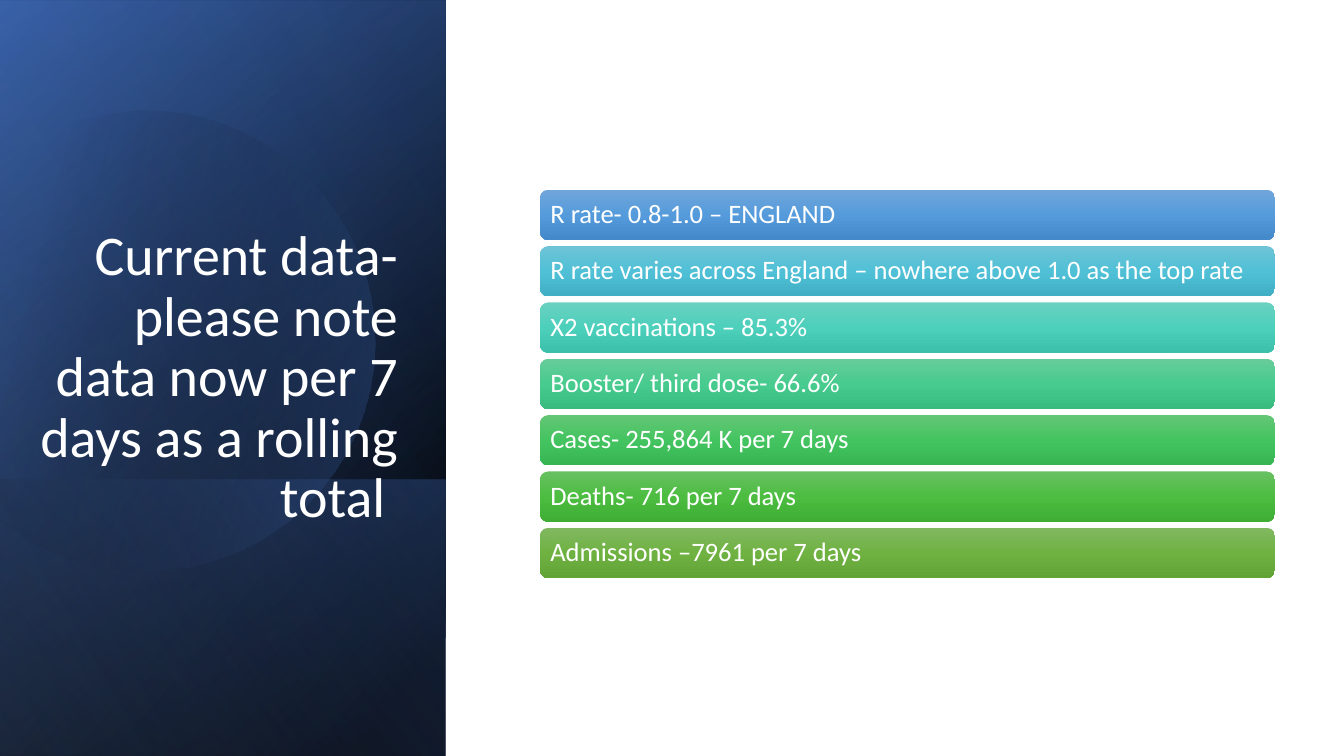
from dataclasses import dataclass
from math import cos, radians, sin

from pptx import Presentation
from pptx.dml.color import RGBColor
from pptx.enum.shapes import MSO_SHAPE
from pptx.enum.text import MSO_ANCHOR, MSO_AUTO_SIZE, PP_ALIGN
from pptx.oxml import parse_xml
from pptx.oxml.ns import nsdecls, qn
from pptx.util import Cm, Pt

FONT = "Calibri"
WHITE = RGBColor(0xFF, 0xFF, 0xFF)
BLACK = RGBColor(0x00, 0x00, 0x00)
NAVY = RGBColor(0x2F, 0x55, 0x97)
BLUE = RGBColor(0x44, 0x72, 0xC4)
PALE_BLUE = RGBColor(0x8F, 0xAA, 0xDC)

TITLE = "Current data- please note data now per 7 days as a rolling total "


@dataclass(frozen=True)
class Stop:
    pos: int
    color: RGBColor
    opacity: int = 100


@dataclass(frozen=True)
class Panel:
    left: float
    top: float
    width: float
    angle: int
    stops: tuple[Stop, ...]


@dataclass(frozen=True)
class Bar:
    text: str
    top_color: RGBColor
    mid_color: RGBColor
    end_color: RGBColor


PANEL_HEIGHT = 11.23
PANELS = [
    Panel(-3.91, 3.91, 19.05, 50, (Stop(8, BLACK), Stop(100, NAVY))),
    Panel(-3.91, 3.93, 19.05, 30, (Stop(0, BLACK, 0), Stop(99, BLUE, 46))),
    Panel(2.13, 9.96, 6.96, 130, (Stop(2, BLUE, 29), Stop(100, BLACK, 30))),
]
GLOW = Panel(-3.91, 3.91, 19.05, 120, (Stop(0, BLACK, 0), Stop(99, PALE_BLUE, 11)))

# Disc outline in cm: three points make a Bezier curve, one point a line.
DISC_START = (3.78, 2.79)
DISC_SEGMENTS = [
    [(6.25, 2.84), (8.51, 4.5), (9.22, 6.99)],
    [(10.11, 10.08), (8.33, 13.28), (5.26, 14.17)],
    [(3.33, 14.73), (1.35, 14.25), (-0.08, 13.06)],
    [(-0.38, 12.78)],
    [(-0.38, 4.45)],
    [(0, 4.09)],
    [(0.58, 3.61), (1.27, 3.25), (2.03, 3.02)],
    [(2.62, 2.87), (3.2, 2.79), (3.78, 2.79)],
]
DISC_CENTER = (4.03, 8.5)
DISC_ROTATION = -16.1
DISC_STOPS = (Stop(29, BLACK, 0), Stop(100, BLUE, 43))
CURVE_STEPS = 16

BAR_LEFT, BAR_TOP, BAR_WIDTH, BAR_HEIGHT, BAR_PITCH = 13.61, 4.78, 18.52, 1.27, 1.42
BARS = [
    Bar("R rate- 0.8-1.0 – ENGLAND",
        RGBColor(0x71, 0xA6, 0xDB), RGBColor(0x55, 0x9B, 0xDB), RGBColor(0x44, 0x8A, 0xCA)),
    Bar("R rate varies across England – nowhere above 1.0 as the top rate",
        RGBColor(0x6E, 0xC4, 0xD6), RGBColor(0x50, 0xC0, 0xD6), RGBColor(0x40, 0xAF, 0xC5)),
    Bar("X2 vaccinations – 85.3%",
        RGBColor(0x6A, 0xD1, 0xC0), RGBColor(0x4C, 0xD0, 0xBC), RGBColor(0x3C, 0xC0, 0xAC)),
    Bar("Booster/ third dose- 66.6%",
        RGBColor(0x67, 0xCC, 0x9A), RGBColor(0x47, 0xCB, 0x8E), RGBColor(0x39, 0xBB, 0x7F)),
    Bar("Cases- 255,864 K per 7 days",
        RGBColor(0x64, 0xC6, 0x77), RGBColor(0x44, 0xC4, 0x60), RGBColor(0x36, 0xB5, 0x52)),
    Bar("Deaths- 716 per 7 days",
        RGBColor(0x69, 0xC0, 0x62), RGBColor(0x4C, 0xBD, 0x41), RGBColor(0x3F, 0xAD, 0x34)),
    Bar("Admissions –7961 per 7 days",
        RGBColor(0x81, 0xB8, 0x61), RGBColor(0x6F, 0xB2, 0x42), RGBColor(0x62, 0xA3, 0x36)),
]


def paint(sp, stops: tuple[Stop, ...], angle: int) -> None:
    """Give the shape a linear gradient, no line and no shadow."""
    sp.shadow.inherit = False
    sp.line.fill.background()
    sp.fill.background()
    gs = "".join(
        f'<a:gs pos="{s.pos * 1000}"><a:srgbClr val="{s.color}">'
        f'<a:alpha val="{s.opacity * 1000}"/></a:srgbClr></a:gs>'
        for s in stops
    )
    grad = parse_xml(
        f'<a:gradFill {nsdecls("a")} rotWithShape="1"><a:gsLst>{gs}</a:gsLst>'
        f'<a:lin ang="{angle * 60000}" scaled="0"/></a:gradFill>'
    )
    sp_pr = sp.element.spPr
    sp_pr.replace(sp_pr.find(qn("a:noFill")), grad)


def add_panel(shapes, panel: Panel) -> None:
    sp = shapes.add_shape(MSO_SHAPE.RECTANGLE, Cm(panel.left), Cm(panel.top),
                          Cm(panel.width), Cm(PANEL_HEIGHT))
    sp.rotation = 90
    sp.element.spPr.find(qn("a:xfrm")).set("flipH", "1")
    paint(sp, panel.stops, panel.angle)


def disc_points() -> list[tuple[float, float]]:
    points = [DISC_START]
    for segment in DISC_SEGMENTS:
        if len(segment) == 1:
            points += segment
            continue
        curve = [points[-1], *segment]
        for step in range(1, CURVE_STEPS + 1):
            t = step / CURVE_STEPS
            weights = ((1 - t) ** 3, 3 * t * (1 - t) ** 2, 3 * t * t * (1 - t), t ** 3)
            points.append((sum(w * x for w, (x, _) in zip(weights, curve)),
                           sum(w * y for w, (_, y) in zip(weights, curve))))
    return points


def unrotate(point: tuple[float, float]) -> tuple[int, int]:
    """Turn a point back about the disc centre, before the shape is rotated."""
    a = radians(-DISC_ROTATION)
    cx, cy = DISC_CENTER
    dx, dy = point[0] - cx, point[1] - cy
    return Cm(cx + dx * cos(a) - dy * sin(a)), Cm(cy + dx * sin(a) + dy * cos(a))


def add_disc(shapes) -> None:
    start, *rest = map(unrotate, disc_points())
    builder = shapes.build_freeform(*start)
    builder.add_line_segments(rest, close=True)
    sp = builder.convert_to_shape()
    sp.rotation = DISC_ROTATION
    paint(sp, DISC_STOPS, 30)


def format_text(tf, text: str, size: int, align: PP_ALIGN, anchor: MSO_ANCHOR) -> None:
    tf.word_wrap = True
    tf.auto_size = MSO_AUTO_SIZE.NONE
    tf.vertical_anchor = anchor
    p = tf.paragraphs[0]
    p.text = text
    p.alignment = align
    p.line_spacing = 0.9
    p.font.name = FONT
    p.font.size = Pt(size)
    p.font.color.rgb = WHITE


def add_bar(shapes, bar: Bar, top: float) -> None:
    sp = shapes.add_shape(MSO_SHAPE.ROUNDED_RECTANGLE, Cm(BAR_LEFT), Cm(top),
                          Cm(BAR_WIDTH), Cm(BAR_HEIGHT))
    paint(sp, (Stop(0, bar.top_color), Stop(50, bar.mid_color), Stop(100, bar.end_color)), 90)
    tf = sp.text_frame
    # The rounded corners already inset the text by 0.06 cm.
    tf.margin_left = tf.margin_right = Cm(0.2)
    tf.margin_top = tf.margin_bottom = Cm(0.2)
    format_text(tf, bar.text, 19, PP_ALIGN.LEFT, MSO_ANCHOR.MIDDLE)


def main() -> None:
    prs = Presentation()
    prs.slide_width, prs.slide_height = Cm(33.87), Cm(19.05)
    s = prs.slides.add_slide(prs.slide_layouts[5])
    shapes = s.shapes

    for panel in PANELS:
        add_panel(shapes, panel)
    add_disc(shapes)
    add_panel(shapes, GLOW)

    title = shapes.title
    title.left, title.top, title.width, title.height = Cm(0.53), Cm(4.67), Cm(9.75), Cm(8.81)
    format_text(title.text_frame, TITLE, 40, PP_ALIGN.RIGHT, MSO_ANCHOR.BOTTOM)
    shapes.element.append(title.element)  # bring in front of the panels

    for i, bar in enumerate(BARS):
        add_bar(shapes, bar, BAR_TOP + i * BAR_PITCH)

    prs.save("out.pptx")


if __name__ == "__main__":
    main()
